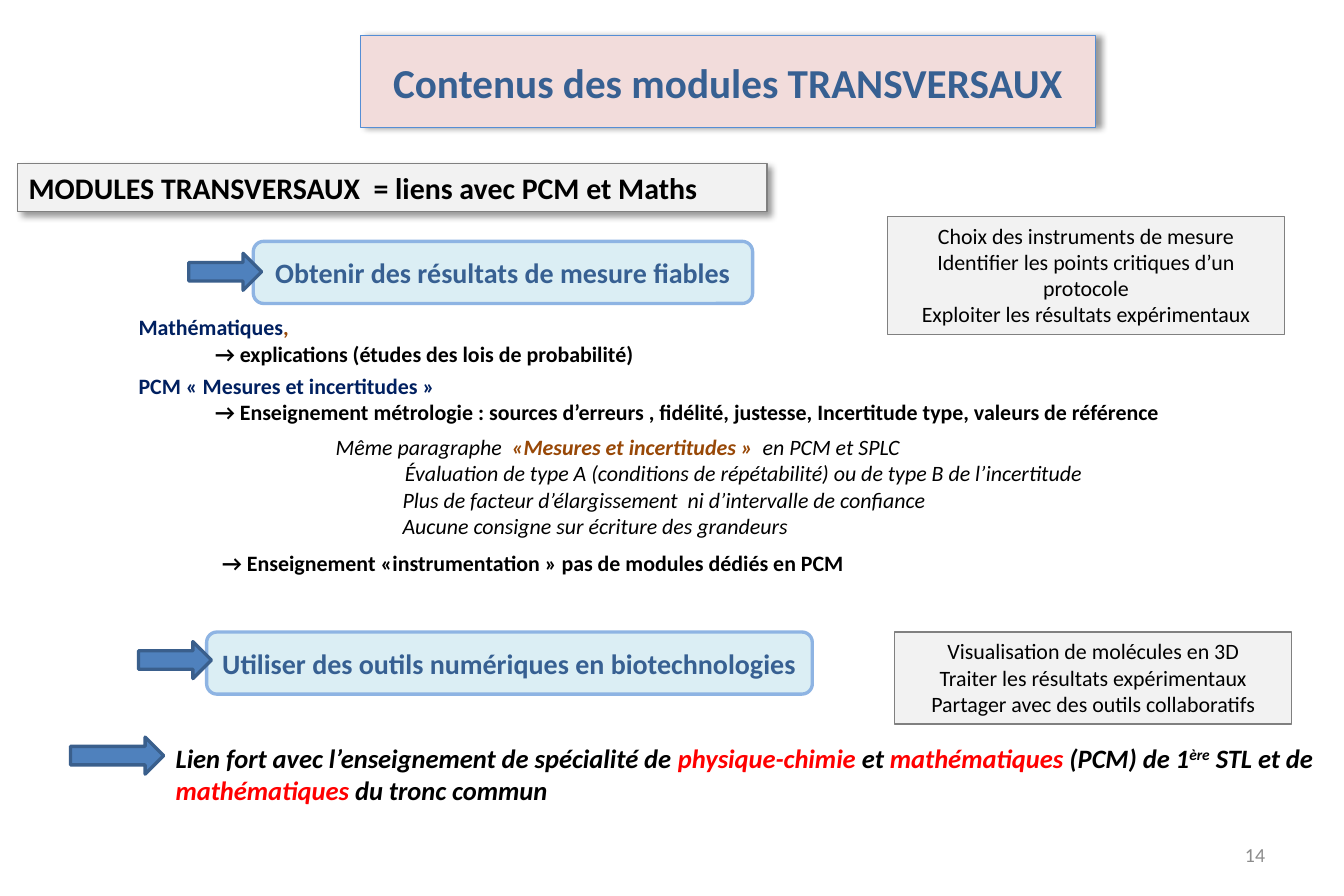
import pptx
import pptx.util
import pptx.dml.color
import pptx.enum.shapes
import pptx.enum.text
import pptx.oxml

Inches = pptx.util.Inches
Pt = pptx.util.Pt
RGBColor = pptx.dml.color.RGBColor
Shape = pptx.enum.shapes.MSO_SHAPE
Align = pptx.enum.text.PP_ALIGN
Anchor = pptx.enum.text.MSO_ANCHOR

BLACK = RGBColor(0x00, 0x00, 0x00)
RED = RGBColor(0xFF, 0x00, 0x00)
NAVY = RGBColor(0x00, 0x20, 0x60)
BROWN = RGBColor(0x98, 0x48, 0x07)
NUMBER_GREY = RGBColor(0x8C, 0x8C, 0x8C)
HEADING_BLUE = RGBColor(0x37, 0x60, 0x92)
PALE_GREY = RGBColor(0xF2, 0xF2, 0xF2)
BORDER_GREY = RGBColor(0x80, 0x80, 0x80)
PALE_BLUE = RGBColor(0xDB, 0xEE, 0xF4)
SOFT_BLUE = RGBColor(0x8E, 0xB4, 0xE3)
PALE_PINK = RGBColor(0xF2, 0xDC, 0xDB)
TITLE_BORDER = RGBColor(0x55, 0x8E, 0xD5)
ARROW_FILL = RGBColor(0x4F, 0x81, 0xBD)
ARROW_BORDER = RGBColor(0x3A, 0x5F, 0x8C)

presentation = pptx.Presentation()
presentation.slide_width = Inches(11.25)
presentation.slide_height = Inches(7.5)
slide = presentation.slides.add_slide(presentation.slide_layouts[6])


def add_box(kind, bounds, fill, border, width, shadow_angle=None):
    shape = slide.shapes.add_shape(kind, *map(Inches, bounds))
    shape.fill.solid()
    shape.fill.fore_color.rgb = fill
    shape.line.color.rgb = border
    shape.line.width = Pt(width)
    shape.shadow.inherit = False
    if shadow_angle is not None:
        effects = shape._element.spPr.find(pptx.oxml.ns.qn("a:effectLst"))
        effects.append(pptx.oxml.parse_xml(
            f'<a:outerShdw {pptx.oxml.ns.nsdecls("a")} blurRad="{Pt(4)}" dist="{Pt(3)}" '
            f'dir="{shadow_angle * 60000}" algn="tl" rotWithShape="0">'
            '<a:srgbClr val="000000"><a:alpha val="40000"/></a:srgbClr></a:outerShdw>'))
    return shape


def write_text(shape, paragraphs, size, bold=False, italic=False,
               alignment=Align.LEFT, anchor=Anchor.TOP):
    frame = shape.text_frame
    frame.word_wrap = True
    frame.vertical_anchor = anchor
    frame.margin_left = frame.margin_right = Inches(0.09)
    frame.margin_top = frame.margin_bottom = Inches(0.05)
    for index, (indent, runs) in enumerate(paragraphs):
        paragraph = frame.add_paragraph() if index else frame.paragraphs[0]
        paragraph.alignment = alignment
        if indent:
            paragraph._p.get_or_add_pPr().set("marL", str(Inches(indent)))
        for text, color in runs:
            run = paragraph.add_run()
            run.text = text
            run.font.name = "Calibri"
            run.font.size = Pt(size)
            run.font.bold = bold or color == BROWN
            run.font.italic = italic
            run.font.color.rgb = color
            if text == "ère":
                run.font._element.set("baseline", "30000")


title = add_box(Shape.RECTANGLE, (3.02, 0.3, 6.15, 0.77), PALE_PINK, TITLE_BORDER, 0.75, 0)
write_text(title, [(0, [("Contenus des modules TRANSVERSAUX", HEADING_BLUE)])], 24.8,
           bold=True, alignment=Align.CENTER, anchor=Anchor.MIDDLE)

subtitle = add_box(Shape.RECTANGLE, (0.15, 1.37, 6.27, 0.4), PALE_GREY, BORDER_GREY, 0.75, 45)
write_text(subtitle, [(0, [("MODULES TRANSVERSAUX  = liens avec PCM et Maths", BLACK)])], 18,
           bold=True)

for left, top, width, heading in [
    (2.12, 2.02, 4.18, "Obtenir des résultats de mesure fiables"),
    (1.73, 5.29, 5.07, "Utiliser des outils numériques en biotechnologies"),
]:
    module = add_box(Shape.ROUNDED_RECTANGLE, (left, top, width, 0.52), PALE_BLUE, SOFT_BLUE, 2)
    write_text(module, [(0, [(heading, HEADING_BLUE)])], 16.9, bold=True,
               alignment=Align.CENTER, anchor=Anchor.MIDDLE)

for left, top, height, skills in [
    (7.43, 1.81, 0.99, ["Choix des instruments de mesure",
                        "Identifier les points critiques d’un protocole",
                        "Exploiter les résultats expérimentaux"]),
    (7.49, 5.29, 0.77, ["Visualisation de molécules en 3D",
                        "Traiter les résultats expérimentaux",
                        "Partager avec des outils collaboratifs"]),
]:
    skill_box = add_box(Shape.RECTANGLE, (left, top, 3.32, height), PALE_GREY, BORDER_GREY, 0.75)
    write_text(skill_box, [(0, [(skill, BLACK)]) for skill in skills], 13.2,
               alignment=Align.CENTER)

for left, top, width in [(1.58, 2.12, 0.61), (1.16, 5.37, 0.61), (0.59, 6.17, 0.78)]:
    add_box(Shape.RIGHT_ARROW, (left, top, width, 0.31), ARROW_FILL, ARROW_BORDER, 2)

for bounds, size, bold, italic, paragraphs in [
    ((1.07, 2.58, 7, 0.54), 13.2, True, False, [
        (0, [("Mathématiques", NAVY), (",", BROWN)]),
        (0.64, [("→ explications (études des lois de probabilité)", BLACK)]),
    ]),
    ((1.07, 3.07, 9.52, 0.54), 13.2, True, False, [
        (0, [("PCM « Mesures et incertitudes »", NAVY)]),
        (0.64, [("→ Enseignement métrologie : sources d’erreurs , fidélité, justesse, "
                 "Incertitude type, valeurs de référence", BLACK)]),
    ]),
    ((2.72, 3.58, 6.66, 0.99), 13.2, False, True, [
        (0, [("Même paragraphe ", BLACK), (" «Mesures et incertitudes » ", BROWN),
             (" en PCM et SPLC", BLACK)]),
        (0.58, [("Évaluation de type A (conditions de répétabilité) "
                 "ou de type B de l’incertitude", BLACK)]),
        (0.56, [("Plus de facteur d’élargissement  ni d’intervalle de confiance", BLACK)]),
        (0.56, [("Aucune consigne sur écriture des grandeurs", BLACK)]),
    ]),
    ((1.77, 4.55, 7, 0.32), 13.2, True, False, [
        (0, [("→ Enseignement «instrumentation » pas de modules dédiés en PCM", BLACK)]),
    ]),
    ((1.38, 6.16, 9.87, 0.64), 16, True, True, [
        (0, [("Lien fort avec l’enseignement de spécialité de ", BLACK),
             ("physique-chimie", RED), (" et ", BLACK), ("mathématiques", RED),
             (" (PCM) de 1", BLACK), ("ère", BLACK), (" STL et de ", BLACK),
             ("mathématiques", RED), (" du tronc commun", BLACK)]),
    ]),
]:
    write_text(slide.shapes.add_textbox(*map(Inches, bounds)), paragraphs, size, bold, italic)

slide_number = slide.shapes.add_textbox(Inches(8.06), Inches(6.95), Inches(2.62), Inches(0.4))
write_text(slide_number, [(0, [("14", NUMBER_GREY)])], 12,
           alignment=Align.RIGHT, anchor=Anchor.MIDDLE)

presentation.save("out.pptx")
